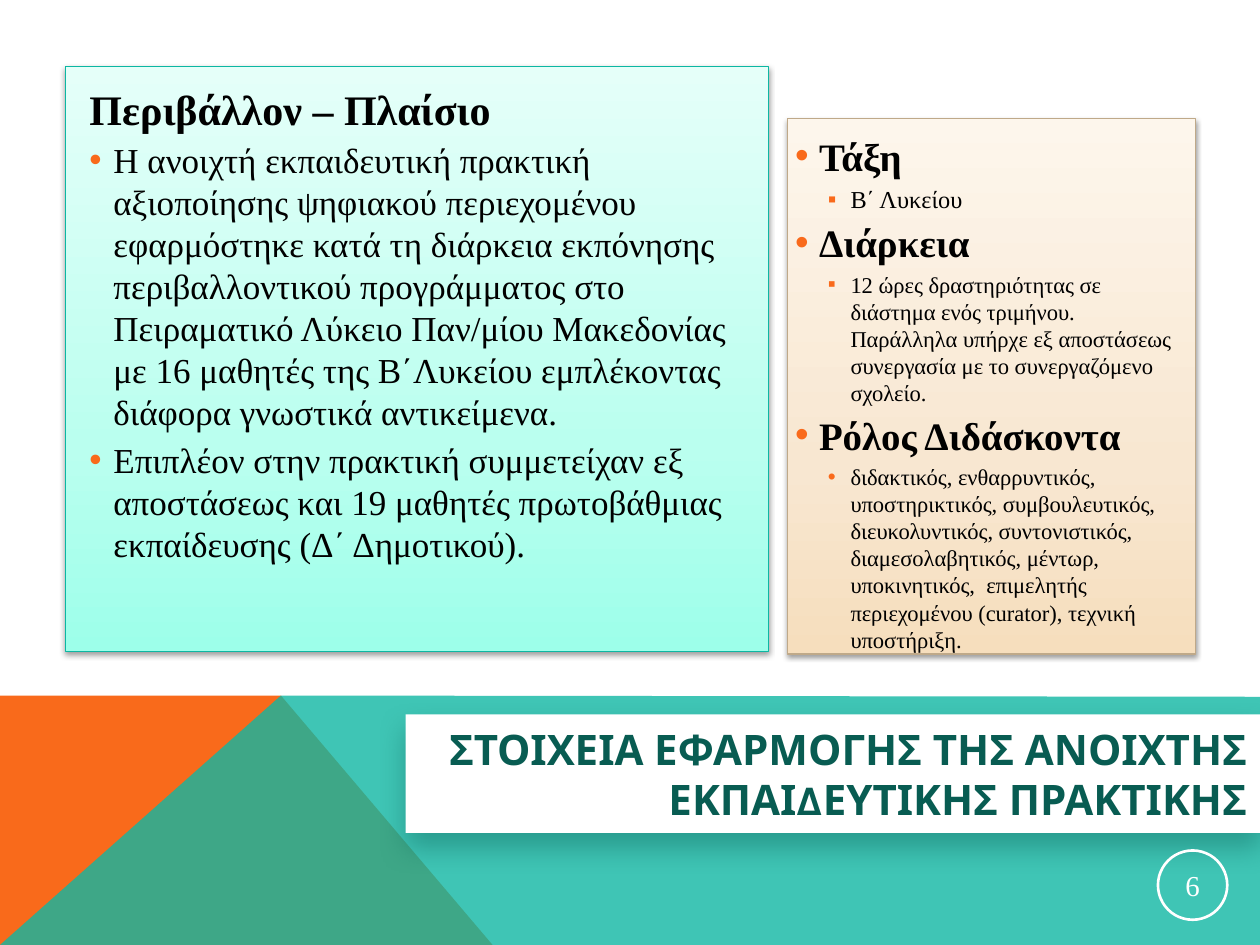
from lxml.etree import SubElement as Sub
from pptx import Presentation
from pptx.dml.color import RGBColor as Rgb
from pptx.enum.shapes import MSO_SHAPE as Kind
from pptx.enum.text import MSO_ANCHOR as Anchor, MSO_AUTO_SIZE as Auto, PP_ALIGN as Align
from pptx.oxml.ns import qn
from pptx.util import Inches, Pt

COLORS = {
    "orange": "F96A1B", "teal": "10B7A3", "deep": "085C52",
    "white": "FFFFFF", "black": "000000",
    "mint edge": "0CB7A3", "sand edge": "BFA989",
}
MINT = [(0, "9DFFEA"), (35, "BAFFEF"), (100, "E5FFF9")]
SAND = [(0, "F6DEBD"), (35, "F8E7D1"), (100, "FDF6EC")]
SERIF = "Times New Roman"

# Paragraph styles: level, left margin, hanging indent, bullet, space before
STYLES = {
    "head": (0, 0.38, 0.38, None, 0),
    "item": (1, 0.19, 0.19, "•", 3),
    "square": (2, 0.44, 0.18, "▪", 3),
    "dot": (2, 0.44, 0.18, "•", 3),
}

TITLE = "ΣΤΟΙΧΕΙΑ ΕΦΑΡΜΟΓΗΣ ΤΗΣ ΑΝΟΙΧΤΗΣ ΕΚΠΑΙΔΕΥΤΙΚΗΣ ΠΡΑΚΤΙΚΗΣ"
# Rows: style, size, bold, text
CONTEXT = [
    ("head", 24, True, "Περιβάλλον – Πλαίσιο"),
    ("item", 20, False,
     "Η ανοιχτή εκπαιδευτική πρακτική αξιοποίησης ψηφιακού περιεχομένου "
     "εφαρμόστηκε κατά τη διάρκεια εκπόνησης περιβαλλοντικού προγράμματος στο "
     "Πειραματικό Λύκειο Παν/μίου Μακεδονίας με 16 μαθητές της Β΄Λυκείου "
     "εμπλέκοντας διάφορα γνωστικά αντικείμενα."),
    ("item", 20, False,
     "Επιπλέον στην πρακτική συμμετείχαν εξ αποστάσεως και 19 μαθητές "
     "πρωτοβάθμιας εκπαίδευσης (Δ΄ Δημοτικού)."),
]
DETAILS = [
    ("item", 22.2, True, "Τάξη"),
    ("square", 13.9, False, "Β΄ Λυκείου"),
    ("item", 22.2, True, "Διάρκεια"),
    ("square", 12.9, False,
     "12 ώρες δραστηριότητας σε διάστημα ενός τριμήνου. Παράλληλα υπήρχε εξ "
     "αποστάσεως συνεργασία με το συνεργαζόμενο σχολείο."),
    ("item", 22.2, True, "Ρόλος Διδάσκοντα"),
    ("dot", 12.9, False,
     "διδακτικός, ενθαρρυντικός, υποστηρικτικός, συμβουλευτικός, "
     "διευκολυντικός, συντονιστικός, διαμεσολαβητικός, μέντωρ, υποκινητικός,  "
     "επιμελητής περιεχομένου (curator), τεχνική υποστήριξη."),
]


def color(name):
    return Rgb.from_string(COLORS[name])


def paint(shape, name):
    shape.fill.solid()
    shape.fill.fore_color.rgb = color(name)


def place(shape, box):
    for key, value in zip(("left", "top", "width", "height"), box):
        setattr(shape, key, Inches(value))


def shade(shape, name, alpha, blur, dist):
    """Give the shape a soft shadow straight below it."""
    shape.shadow.inherit = False
    effects = shape.element.spPr.find(qn("a:effectLst"))
    outer = Sub(effects, qn("a:outerShdw"), blurRad=str(Pt(blur)),
                dist=str(Pt(dist)), dir="5400000", rotWithShape="0")
    tint = Sub(outer, qn("a:srgbClr"), val=COLORS[name])
    Sub(tint, qn("a:alpha"), val=str(alpha * 1000))


def wedge(slide, points, name, alpha=100):
    first, *rest = [(Inches(x), Inches(y)) for x, y in points]
    maker = slide.shapes.build_freeform(*first)
    maker.add_line_segments(rest, close=True)
    shape = maker.convert_to_shape()
    paint(shape, name)
    shape.line.fill.background()
    shape.shadow.inherit = False
    if alpha < 100:
        tint = shape.element.spPr.find(".//" + qn("a:srgbClr"))
        Sub(tint, qn("a:alpha"), val=str(alpha * 1000))


def panel(slide, box, stops, edge):
    shape = slide.shapes.add_shape(Kind.RECTANGLE, *map(Inches, box))
    shape.fill.gradient()
    shape.fill.gradient_angle = 90
    ramp = shape.element.spPr.find(".//" + qn("a:gsLst"))
    for stop in list(ramp):
        ramp.remove(stop)
    for pos, tint in stops:
        stop = Sub(ramp, qn("a:gs"), pos=str(pos * 1000))
        Sub(stop, qn("a:srgbClr"), val=tint)
    shape.line.color.rgb = color(edge)
    shape.line.width = Pt(0.75)
    shade(shape, "black", 38, 3.1, 1.6)


def write(para, text, tint, **form):
    run = para.add_run()
    run.text = text
    run.font.color.rgb = color(tint)
    for key, value in form.items():
        setattr(run.font, key, value)


def mark(para, left, hang, sign):
    """Set the indents and the bullet of a paragraph."""
    props = para._p.get_or_add_pPr()
    props.set("marL", str(Inches(left)))
    props.set("indent", str(-Inches(hang)))
    if sign:
        tint = Sub(props, qn("a:buClr"))
        Sub(tint, qn("a:srgbClr"), val=COLORS["orange"])
        Sub(props, qn("a:buFont"), typeface="Arial")
        Sub(props, qn("a:buChar"), char=sign)
    else:
        Sub(props, qn("a:buNone"))


def body(slide, holder, box, rows):
    slide.shapes._spTree.append(holder.element)  # above the panels
    place(holder, box)
    frame = holder.text_frame
    frame.auto_size = Auto.NONE
    for i, (style, size, bold, text) in enumerate(rows):
        para = frame.add_paragraph() if i else frame.paragraphs[0]
        level, left, hang, sign, before = STYLES[style]
        mark(para, left, hang, sign)
        form = {"level": level, "alignment": Align.LEFT, "line_spacing": 1.0,
                "space_before": Pt(before if i else 0), "space_after": Pt(0)}
        for key, value in form.items():
            setattr(para, key, value)
        write(para, text, "black", size=Pt(size), bold=bold, name=SERIF)


def head(slide, box):
    holder = slide.shapes.title
    slide.shapes._spTree.append(holder.element)
    place(holder, box)
    paint(holder, "white")
    shade(holder, "deep", 40, 16, 8)
    frame = holder.text_frame
    frame.auto_size = Auto.NONE
    frame.vertical_anchor = Anchor.MIDDLE
    para = frame.paragraphs[0]
    para.alignment = Align.RIGHT
    para.line_spacing = 1.0
    write(para, TITLE, "deep", size=Pt(24), bold=True, name="Karla")


def badge(slide, box, text):
    shape = slide.shapes.add_shape(Kind.OVAL, *map(Inches, box))
    shape.fill.background()
    shape.line.color.rgb = color("white")
    shape.line.width = Pt(1.5)
    shape.shadow.inherit = False
    frame = shape.text_frame
    for side in ("left", "top", "right", "bottom"):
        setattr(frame, "margin_" + side, Inches(0.01))
    frame.vertical_anchor = Anchor.MIDDLE
    para = frame.paragraphs[0]
    para.alignment = Align.CENTER
    write(para, text, "white", size=Pt(16.5), name=SERIF)


def main():
    deck = Presentation()
    deck.slide_width, deck.slide_height = Inches(10), Inches(7.5)
    slide = deck.slides.add_slide(deck.slide_layouts[3])
    _, left, right = slide.placeholders

    # Coloured band at the foot
    wedge(slide, [(0, 7.5), (0, 5.52), (2.23, 5.52), (3.91, 7.5)], "orange")
    wedge(slide, [(0, 7.5), (2.23, 5.52), (10, 5.53), (10, 7.5)], "teal", 80)

    # Panels
    panel(slide, (6.25, 0.94, 3.24, 4.25), SAND, "sand edge")
    panel(slide, (0.52, 0.53, 5.58, 4.64), MINT, "mint edge")

    # Title, texts and page number
    head(slide, (3.22, 5.67, 6.78, 0.94))
    body(slide, left, (0.61, 0.61, 5.42, 4.52), CONTEXT)
    body(slide, right, (6.21, 1, 3.31, 4.06), DETAILS)
    badge(slide, (9.19, 6.75, 0.55, 0.55), "6")

    deck.save("out.pptx")


if __name__ == "__main__":
    main()
